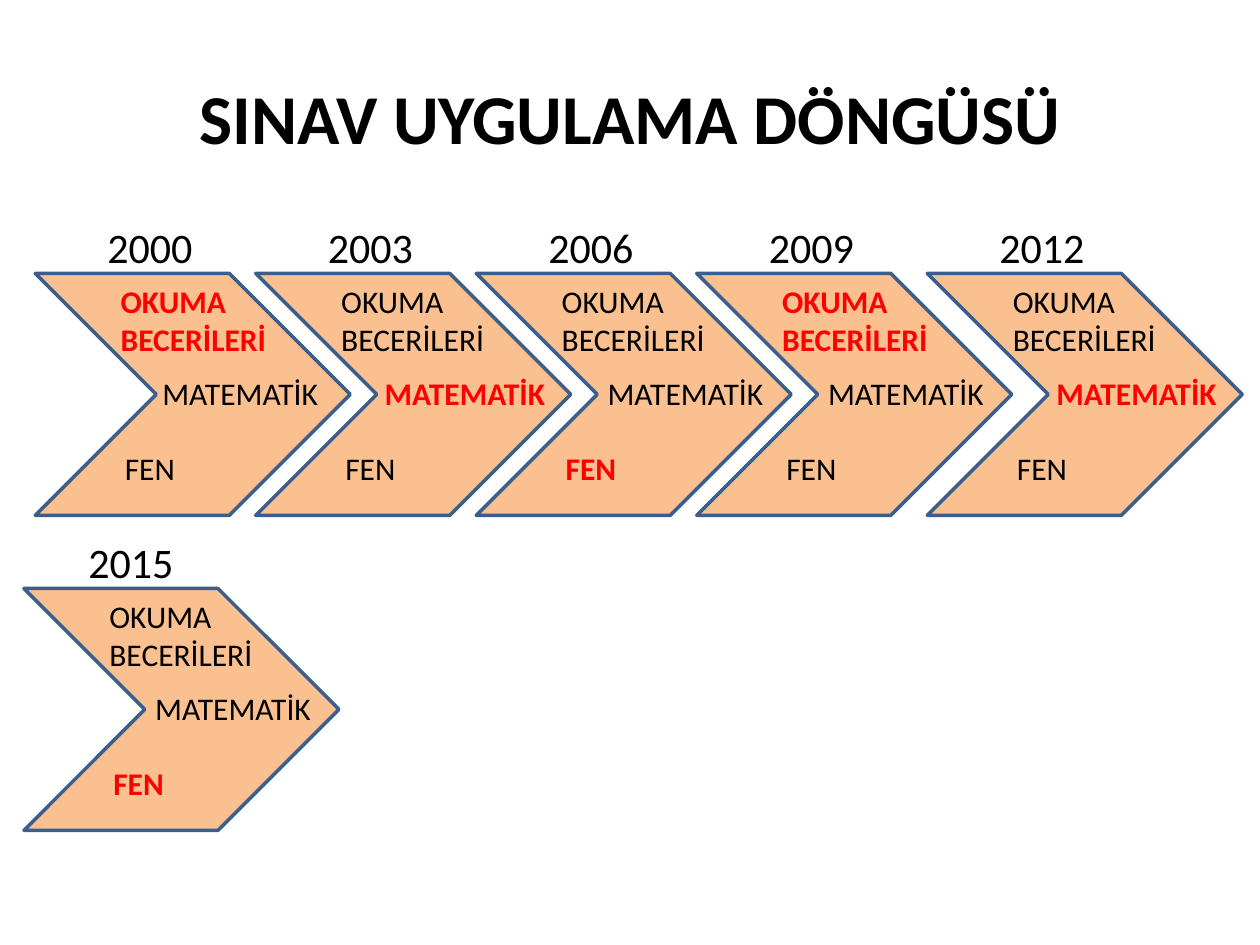
from dataclasses import dataclass

from pptx import Presentation
from pptx.dml.color import RGBColor
from pptx.enum.shapes import MSO_SHAPE
from pptx.enum.text import MSO_ANCHOR, PP_ALIGN
from pptx.shapes.group import GroupShape
from pptx.slide import Slide
from pptx.text.text import TextFrame
from pptx.util import Inches, Pt


@dataclass(frozen=True)
class Theme:
    font: str = "Calibri"
    text: RGBColor = RGBColor(0x00, 0x00, 0x00)
    focus: RGBColor = RGBColor(0xFF, 0x00, 0x00)
    fill: RGBColor = RGBColor(0xFA, 0xC0, 0x90)
    line: RGBColor = RGBColor(0x3A, 0x5F, 0x8C)
    title_size: Pt = Pt(40)
    year_size: Pt = Pt(24)
    subject_size: Pt = Pt(18)
    line_width: Pt = Pt(2)


@dataclass(frozen=True)
class Subject:
    name: str
    dx: float
    dy: float
    align: PP_ALIGN = PP_ALIGN.CENTER


@dataclass(frozen=True)
class Cycle:
    year: str
    left: float
    top: float
    focus: Subject
    year_dx: float = 0.16
    maths_align: PP_ALIGN = PP_ALIGN.CENTER


THEME = Theme()
READING = Subject("OKUMA BECERİLERİ", 0.58, 0.08, PP_ALIGN.LEFT)
MATHS = Subject("MATEMATİK", 0.91, 0.66)
SCIENCE = Subject("FEN", 0.16, 1.25)
SUBJECTS = (READING, SCIENCE, MATHS)

FIRST_LEFT, ROW_TOP, STEP = 0.28, 2.17, 1.75
CYCLES = [
    Cycle("2000", FIRST_LEFT, ROW_TOP, READING, maths_align=PP_ALIGN.LEFT),
    *(
        Cycle(year, FIRST_LEFT + index * STEP, ROW_TOP, focus)
        for index, (year, focus) in enumerate(
            [("2003", MATHS), ("2006", SCIENCE), ("2009", READING)], start=1
        )
    ),
    Cycle("2012", 7.36, ROW_TOP, MATHS),
    Cycle("2015", 0.19, 4.67, SCIENCE, year_dx=0.10),
]


def write(frame: TextFrame, text: str, size: Pt, align: PP_ALIGN,
          color: RGBColor = THEME.text, bold: bool = False) -> None:
    frame.word_wrap = True
    frame.vertical_anchor = MSO_ANCHOR.MIDDLE
    paragraph = frame.paragraphs[0]
    paragraph.alignment = align
    run = paragraph.add_run()
    run.text = text
    run.font.name = THEME.font
    run.font.size = size
    run.font.bold = bold
    run.font.color.rgb = color


def add_label(group: GroupShape, left: float, top: float) -> TextFrame:
    box = group.shapes.add_textbox(Inches(left), Inches(top), Inches(1.5), Inches(0.58))
    return box.text_frame


def add_cycle(slide: Slide, cycle: Cycle) -> None:
    """Draw one chevron with its year above and its focus subject highlighted."""
    group = slide.shapes.add_group_shape()
    chevron = group.shapes.add_shape(
        MSO_SHAPE.CHEVRON, Inches(cycle.left), Inches(cycle.top), Inches(2.5), Inches(1.92)
    )
    chevron.shadow.inherit = False
    chevron.fill.solid()
    chevron.fill.fore_color.rgb = THEME.fill
    chevron.line.color.rgb = THEME.line
    chevron.line.width = THEME.line_width

    for subject in SUBJECTS:
        focused = subject == cycle.focus
        align = cycle.maths_align if subject == MATHS else subject.align
        frame = add_label(group, cycle.left + subject.dx, cycle.top + subject.dy)
        write(frame, subject.name, THEME.subject_size, align,
              THEME.focus if focused else THEME.text, focused)

    year_frame = add_label(group, cycle.left + cycle.year_dx, cycle.top - 0.5)
    write(year_frame, cycle.year, THEME.year_size, PP_ALIGN.CENTER)


def main() -> None:
    presentation = Presentation()
    presentation.slide_width = Inches(10)
    presentation.slide_height = Inches(7.5)
    slide = presentation.slides.add_slide(presentation.slide_layouts[5])

    title = slide.shapes.title
    title.left, title.top = Inches(0.5), Inches(0.3)
    title.width, title.height = Inches(9), Inches(1.25)
    write(title.text_frame, "SINAV UYGULAMA DÖNGÜSÜ", THEME.title_size,
          PP_ALIGN.CENTER, bold=True)

    for cycle in CYCLES:
        add_cycle(slide, cycle)

    presentation.save("out.pptx")


if __name__ == "__main__":
    main()
